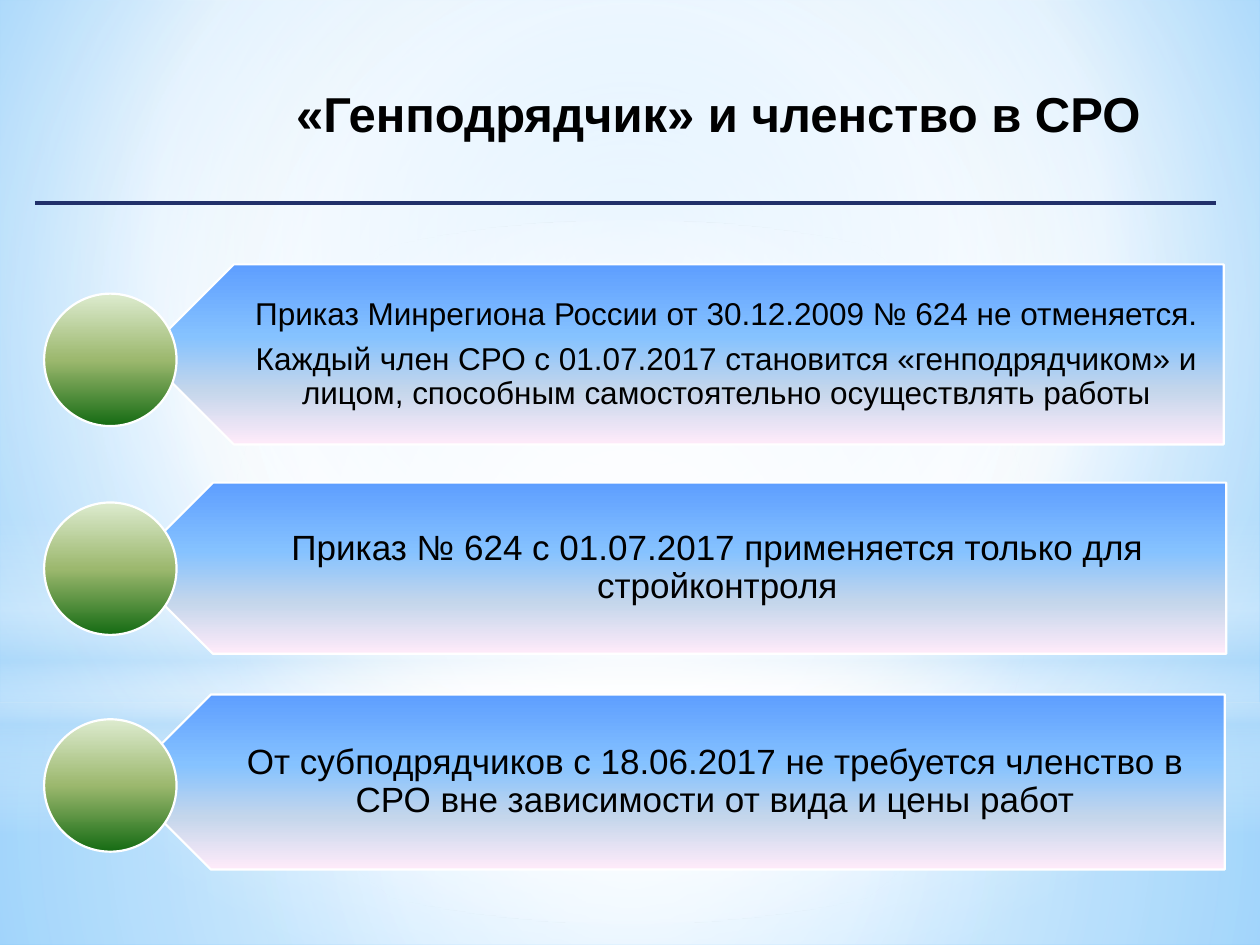
from lxml import etree
from pptx import Presentation
from pptx import util as u
from pptx.dml.color import RGBColor
from pptx.enum import shapes, text
from pptx.oxml import parse_xml
from pptx.oxml.ns import nsdecls, qn

WHITE = RGBColor(0xFF, 0xFF, 0xFF)
BLACK = RGBColor(0x00, 0x00, 0x00)
NAVY = RGBColor(0x21, 0x30, 0x6A)
SKY = RGBColor(0xB4, 0xDC, 0xFA)
PALE_BLUE = RGBColor(0x9E, 0xD5, 0xFF)
EDGE_BLUE = RGBColor(0x5B, 0xB9, 0xFF)
BLUE = RGBColor(0x5E, 0x9E, 0xFF)
LIGHT_BLUE = RGBColor(0x85, 0xC2, 0xFF)
GREY_BLUE = RGBColor(0xC4, 0xD6, 0xEB)
PINK = RGBColor(0xFF, 0xEB, 0xFA)
PALE_GREEN = RGBColor(0xDD, 0xEB, 0xCF)
GREEN = RGBColor(0x9C, 0xB8, 0x6E)
DARK_GREEN = RGBColor(0x15, 0x6B, 0x13)

CENTRE = (50, 50, 50, 50)
ARROW_STOPS = [(0, BLUE, 100), (40, LIGHT_BLUE, 100), (70, GREY_BLUE, 100), (100, PINK, 100)]
CIRCLE_STOPS = [(0, PALE_GREEN, 100), (50, GREEN, 100), (100, DARK_GREEN, 100)]


def gradient(stops, focus=None):
    marks = "".join(
        f'<a:gs pos="{pos * 1000}"><a:srgbClr val="{color}">'
        f'<a:alpha val="{alpha * 1000}"/></a:srgbClr></a:gs>'
        for pos, color, alpha in stops
    )
    shade = '<a:lin ang="5400000" scaled="0"/>'
    if focus:
        left, top, right, bottom = (side * 1000 for side in focus)
        shade = (f'<a:path path="circle"><a:fillToRect l="{left}" t="{top}" '
                 f'r="{right}" b="{bottom}"/></a:path>')
    return parse_xml(f'<a:gradFill {nsdecls("a")} rotWithShape="1">'
                     f'<a:gsLst>{marks}</a:gsLst>{shade}</a:gradFill>')


def add_gradient_shape(kind, left, top, width, height, stops, focus=None, outlined=True):
    shape = page.shapes.add_shape(kind, u.Cm(left), u.Cm(top), u.Cm(width), u.Cm(height))
    shape.shadow.inherit = False
    if outlined:
        shape.line.color.rgb = WHITE
        shape.line.width = u.Pt(1.25)
    else:
        shape.line.fill.background()
    shape._element.spPr.insert(2, gradient(stops, focus))
    return shape


deck = Presentation()
deck.slide_width = u.Cm(25.4)
deck.slide_height = u.Cm(19.05)
page = deck.slides.add_slide(deck.slide_layouts[6])

page.background.fill.solid()
backdrop = page._element.cSld.find(qn("p:bg")).find(qn("p:bgPr"))
backdrop.replace(backdrop[0], gradient(
    [(0, PALE_BLUE, 100), (60, WHITE, 100), (100, EDGE_BLUE, 100)], (20, 10, 20, 60)))

RECT = shapes.MSO_SHAPE.RECTANGLE
OVAL = shapes.MSO_SHAPE.OVAL
glows = [
    (RECT, 14.17, 4.88, [(0, WHITE, 91), (37, WHITE, 76), (100, SKY, 79)], CENTRE),
    (RECT, 0, 14.17, [(0, WHITE, 89), (48, WHITE, 62), (100, SKY, 79)], CENTRE),
    (RECT, 10.46, 6.35, [(0, WHITE, 0), (29, WHITE, 30), (45, SKY, 40),
                         (55, WHITE, 26), (65, SKY, 60), (100, WHITE, 0)], None),
    (OVAL, 4.45, 14.17, [(0, WHITE, 100), (56, WHITE, 0)], CENTRE),
]
for kind, top, height, stops, focus in glows:
    add_gradient_shape(kind, 0, top, 25.4, height, stops, focus, outlined=False)

title = page.shapes.add_textbox(u.Cm(5.31), u.Cm(1.55), u.Cm(18.34), u.Cm(1.45))
title.text_frame.word_wrap = True
para = title.text_frame.paragraphs[0]
para.text = "«Генподрядчик» и членство в СРО"
para.alignment = text.PP_ALIGN.CENTER
para.font.name = "Arial"
para.font.size = u.Pt(28)
para.font.bold = True
para.font.color.rgb = BLACK

rule = page.shapes.add_connector(
    shapes.MSO_CONNECTOR.STRAIGHT, u.Cm(0.71), u.Cm(4.09), u.Cm(24.51), u.Cm(4.09))
rule.line.color.rgb = NAVY
rule.line.width = u.Pt(2)
etree.SubElement(rule._element.spPr, qn("a:effectLst"))

rows = [
    (2.9, 5.33, 21.77, 3.63, 5.92, 18, [
        "Приказ Минрегиона России от 30.12.2009 № 624 не отменяется.",
        "Каждый член СРО с 01.07.2017 становится «генподрядчиком» и лицом, "
        "способным самостоятельно осуществлять работы"]),
    (2.57, 9.73, 22.15, 3.45, 10.13, 20, [
        "Приказ № 624 с 01.07.2017 применяется только для стройконтроля"]),
    (2.49, 14, 22.2, 3.53, 14.5, 20, [
        "От субподрядчиков с 18.06.2017 не требуется членство в СРО "
        "вне зависимости от вида и цены работ"]),
]
for left, top, width, height, circle_top, size, lines in rows:
    arrow = add_gradient_shape(
        shapes.MSO_SHAPE.PENTAGON, left, top, width, height, ARROW_STOPS)
    arrow._element.spPr.xfrm.set("flipH", "1")

    inset = height / 4
    box = page.shapes.add_textbox(
        u.Cm(left + inset), u.Cm(top), u.Cm(width - inset), u.Cm(height))
    frame = box.text_frame
    frame.word_wrap = True
    frame.vertical_anchor = text.MSO_ANCHOR.MIDDLE
    frame.margin_left = u.Cm(1.17)
    frame.margin_right = u.Cm(size / 50)
    frame.margin_top = frame.margin_bottom = u.Cm(size / 100)
    frame.text = "\n".join(lines)
    for para in frame.paragraphs:
        para.alignment = text.PP_ALIGN.CENTER
        para.line_spacing = 0.9
        para.space_after = u.Pt(size * 0.35)
        para.font.name = "Arial"
        para.font.size = u.Pt(size)
        para.font.color.rgb = BLACK

    add_gradient_shape(OVAL, 0.89, circle_top, 2.67, 2.67, CIRCLE_STOPS)

deck.save("out.pptx")
